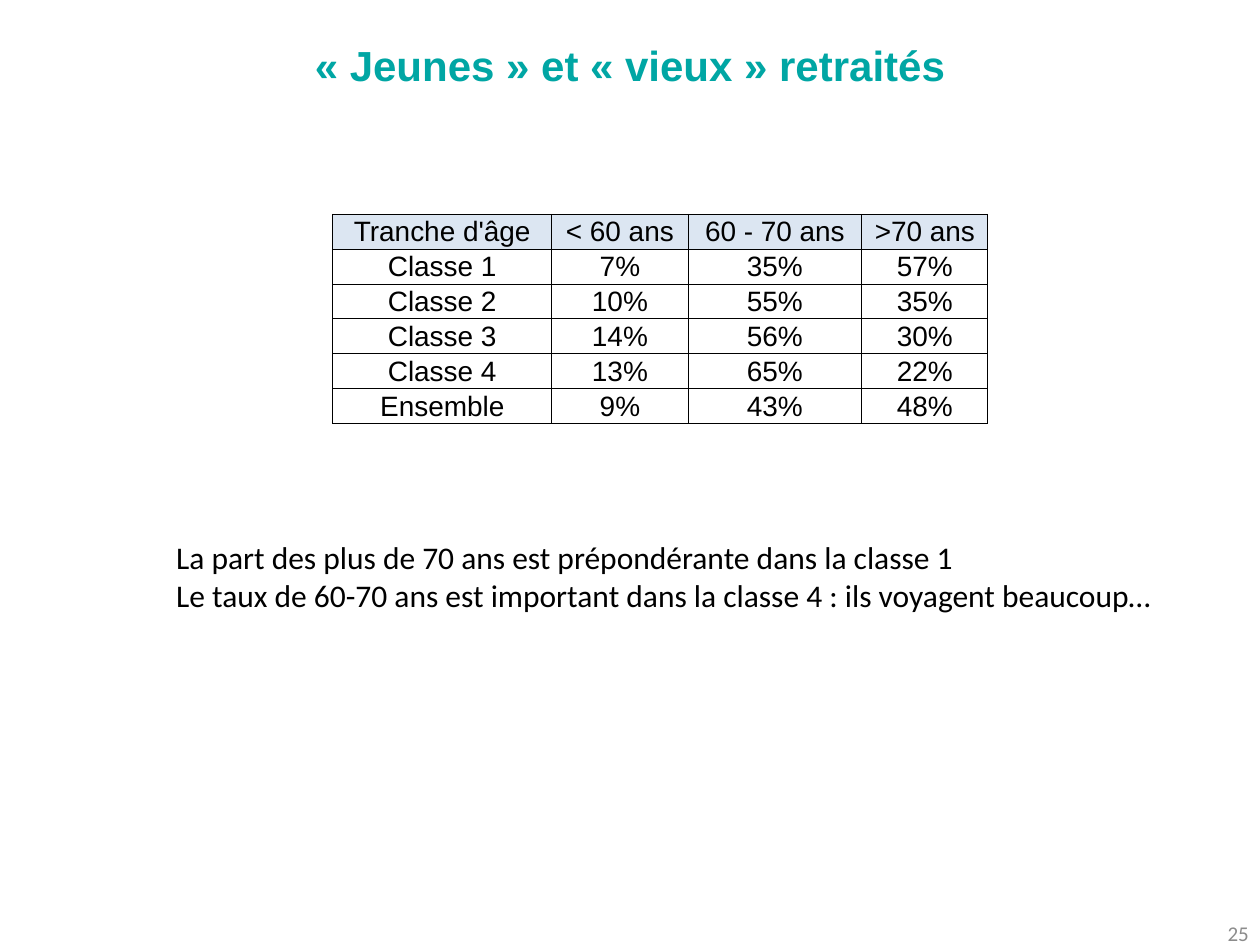
from lxml import etree
from pptx import Presentation
from pptx.dml.color import RGBColor
from pptx.enum.text import MSO_ANCHOR, MSO_AUTO_SIZE, PP_ALIGN
from pptx.oxml.ns import qn
from pptx.util import Inches, Pt

LEFT, CENTER, RIGHT = PP_ALIGN.LEFT, PP_ALIGN.CENTER, PP_ALIGN.RIGHT
MIDDLE = MSO_ANCHOR.MIDDLE


def color(value):
    return RGBColor.from_string(value)


def write(p, text, align, fmt):
    p.alignment = align
    r = p.add_run()
    r.text = text
    for name, value in fmt.items():
        if name == "color":
            r.font.color.rgb = color(value)
        else:
            setattr(r.font, name, value)


TITLE = {"name": "Arial", "size": Pt(24), "bold": True, "color": "00A6A4"}
NUMBER = {"name": "Calibri", "size": Pt(12), "color": "8C8C8C"}
CELL = {"name": "Arial", "size": Pt(16), "bold": False, "color": "000000"}
COMMENT = {"name": "Calibri", "size": Pt(18), "color": "000000"}

prs = Presentation()
prs.slide_width, prs.slide_height = Inches(10), Inches(7.5)
s = prs.slides.add_slide(prs.slide_layouts[5])

title = s.shapes.title
title.left, title.top = Inches(0), Inches(0.21)
title.width, title.height = Inches(10), Inches(0.61)
title.text_frame.vertical_anchor = MIDDLE
write(title.text_frame.paragraphs[0], "« Jeunes » et « vieux » retraités", CENTER, TITLE)

number = s.shapes.add_textbox(Inches(7.68), Inches(7.21), Inches(2.33), Inches(0.4))
tf = number.text_frame
tf.word_wrap = True
tf.vertical_anchor = MIDDLE
write(tf.paragraphs[0], "25", RIGHT, NUMBER)

rows = [
    ("Tranche d'âge", "< 60 ans", "60 - 70 ans", ">70 ans"),
    ("Classe 1", "7%", "35%", "57%"),
    ("Classe 2", "10%", "55%", "35%"),
    ("Classe 3", "14%", "56%", "30%"),
    ("Classe 4", "13%", "65%", "22%"),
    ("Ensemble", "9%", "43%", "48%"),
]
widths = [1.74, 1.08, 1.38, 1]
row_height = 0.26
table = s.shapes.add_table(
    len(rows), len(widths), Inches(2.64), Inches(1.7),
    Inches(sum(widths)), Inches(row_height * len(rows)),
).table
table.first_row = table.horz_banding = False
for column, width in zip(table.columns, widths):
    column.width = Inches(width)

for i, row in enumerate(rows):
    table.rows[i].height = Inches(row_height)
    for j, text in enumerate(row):
        cell = table.cell(i, j)
        cell.margin_left = cell.margin_right = cell.margin_top = Inches(0.01)
        cell.margin_bottom = Inches(0)
        cell.vertical_anchor = MIDDLE
        write(cell.text_frame.paragraphs[0], text, CENTER, CELL)
        tcPr = cell._tc.get_or_add_tcPr()
        for side in ("lnL", "lnR", "lnT", "lnB"):
            ln = etree.SubElement(tcPr, qn(f"a:{side}"), w=str(Pt(0.5)))
            fill = etree.SubElement(ln, qn("a:solidFill"))
            etree.SubElement(fill, qn("a:srgbClr"), val="000000")
        if i == 0:
            cell.fill.solid()
            cell.fill.fore_color.rgb = color("DCE6F2")
        else:
            cell.fill.background()

comments = [
    "La part des plus de 70 ans est prépondérante dans la classe 1",
    "Le taux de 60-70 ans est important dans la classe 4 : ils voyagent beaucoup…",
]
box = s.shapes.add_textbox(Inches(1.3), Inches(4.22), Inches(8), Inches(0.71))
tf = box.text_frame
tf.word_wrap = False
tf.auto_size = MSO_AUTO_SIZE.SHAPE_TO_FIT_TEXT
for i, text in enumerate(comments):
    p = tf.add_paragraph() if i else tf.paragraphs[0]
    write(p, text, LEFT, COMMENT)

prs.save("out.pptx")
